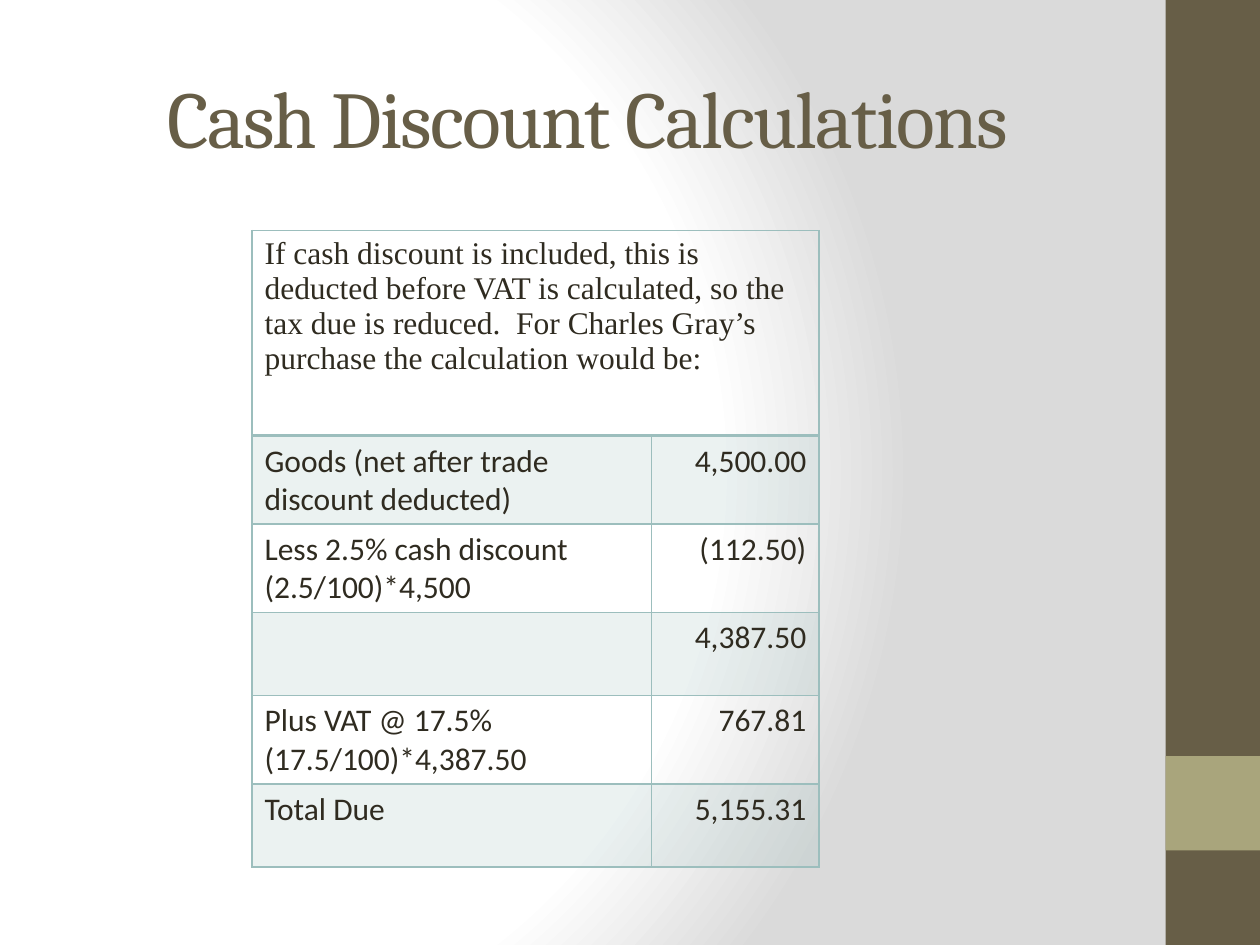
"""Build the cash discount calculations slide."""
from lxml.etree import SubElement
from pptx import Presentation
from pptx.dml.color import RGBColor
from pptx.enum.shapes import MSO_SHAPE
from pptx.enum.text import MSO_ANCHOR, PP_ALIGN
from pptx.oxml import parse_xml
from pptx.oxml.ns import nsdecls, qn
from pptx.util import Inches, Pt

BROWN = RGBColor(0x67, 0x5E, 0x47)
OLIVE = RGBColor(0xA9, 0xA5, 0x7C)
TEAL = RGBColor(0x9C, 0xBE, 0xBD)
INK = RGBColor(0x2F, 0x2B, 0x20)
WHITE = RGBColor(0xFF, 0xFF, 0xFF)
GREY = RGBColor(0xDA, 0xDA, 0xDA)

INTRO = (
    "If cash discount is included, this is deducted before VAT is calculated, "
    "so the tax due is reduced.  For Charles Gray’s purchase the calculation would be:"
)
ROWS = [
    (INTRO, ""),
    ("Goods (net after trade discount deducted)", "4,500.00"),
    ("Less 2.5% cash discount\n(2.5/100)*4,500", "(112.50)"),
    ("", "4,387.50"),
    ("Plus VAT @ 17.5%\n(17.5/100)*4,387.50", "767.81"),
    ("Total Due", "5,155.31"),
]


def add_run(paragraph, text, font_name, size, color):
    run = paragraph.add_run()
    run.text = text
    run.font.name = font_name
    run.font.size = Pt(size)
    run.font.color.rgb = color
    return run


def style_cell(cell, tinted, bottom_width):
    if tinted:
        cell.fill.solid()
        cell.fill.fore_color.rgb = TEAL
        color = cell._tc.tcPr.find(".//" + qn("a:srgbClr"))
        SubElement(color, qn("a:alpha"), val="20000")
    else:
        cell.fill.background()
    widths = {"lnL": 1, "lnR": 1, "lnT": 1, "lnB": bottom_width}
    for position, (side, width) in enumerate(widths.items()):
        border = parse_xml(
            f'<a:{side} {nsdecls("a")} w="{Pt(width)}"><a:solidFill>'
            f'<a:srgbClr val="{TEAL}"/></a:solidFill></a:{side}>'
        )
        cell._tc.tcPr.insert(position, border)


presentation = Presentation()
presentation.slide_width = Inches(10)
presentation.slide_height = Inches(7.5)
slide = presentation.slides.add_slide(presentation.slide_layouts[6])

slide.background.fill.gradient()
gradient = slide._element.find(".//" + qn("a:gradFill"))
stops = "".join(
    f'<a:gs pos="{position * 1000}"><a:srgbClr val="{color}"/></a:gs>'
    for position, color in [(0, WHITE), (75, WHITE), (100, GREY)]
)
gradient.getparent().replace(gradient, parse_xml(
    f'<a:gradFill {nsdecls("a")} rotWithShape="1"><a:gsLst>{stops}</a:gsLst>'
    '<a:path path="circle"><a:fillToRect l="20000" t="50000" r="100000" b="50000"/>'
    '</a:path></a:gradFill>'
))

for top, height, color in [(0, 7.5, BROWN), (6, 0.75, OLIVE)]:
    band = slide.shapes.add_shape(
        MSO_SHAPE.RECTANGLE, Inches(9.25), Inches(top), Inches(0.75), Inches(height)
    )
    band.shadow.inherit = False
    band.fill.solid()
    band.fill.fore_color.rgb = color
    band.line.fill.background()

title = slide.shapes.add_textbox(Inches(0.5), Inches(0.3), Inches(8.33), Inches(1.25))
title.text_frame.word_wrap = True
title.text_frame.vertical_anchor = MSO_ANCHOR.MIDDLE
paragraph = title.text_frame.paragraphs[0]
paragraph.alignment = PP_ALIGN.CENTER
run = add_run(paragraph, "Cash Discount Calculations", "Cambria", 46, BROWN)
run.font._element.set("spc", "-100")

table = slide.shapes.add_table(
    len(ROWS), 2, Inches(2), Inches(1.83), Inches(4.5), Inches(4.93)
).table
table.first_row = False
table.horz_banding = False
table.columns[0].width = Inches(3.17)
table.columns[1].width = Inches(1.33)
table.cell(0, 0).merge(table.cell(0, 1))

for row_index, texts in enumerate(ROWS):
    is_intro = row_index == 0
    table.rows[row_index].height = Inches(1.63 if is_intro else 0.66)
    font_name = "Times New Roman" if is_intro else "Calibri"
    for column_index, text in enumerate(texts):
        cell = table.cell(row_index, column_index)
        style_cell(cell, row_index % 2 == 1, 2 if is_intro else 1)
        for line_index, line in enumerate(text.split("\n") if text else []):
            frame = cell.text_frame
            paragraph = frame.add_paragraph() if line_index else frame.paragraphs[0]
            paragraph.alignment = PP_ALIGN.RIGHT if column_index else PP_ALIGN.LEFT
            add_run(paragraph, line, font_name, 18, INK)

presentation.save("out.pptx")
